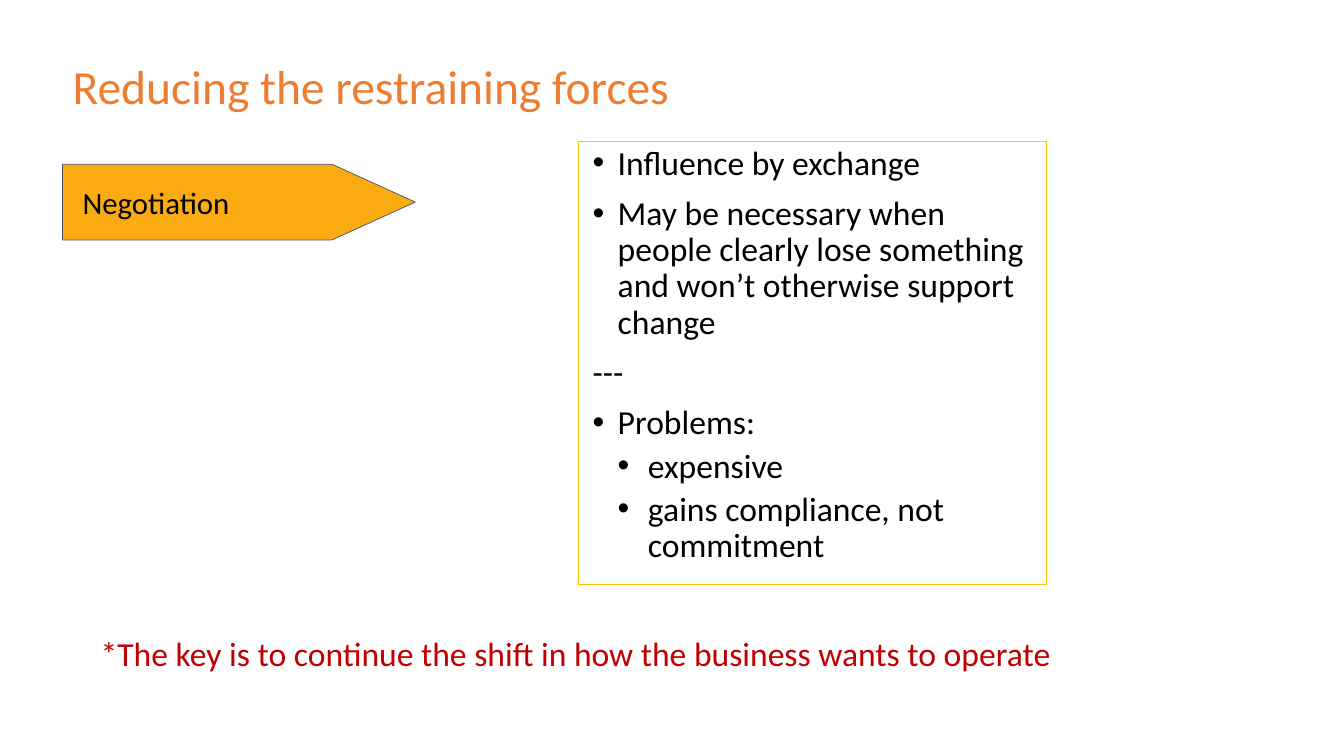
"""Build the slide on negotiation as a way of reducing restraining forces."""
from dataclasses import dataclass

import pptx
import pptx.dml.color
import pptx.enum.shapes
import pptx.enum.text
import pptx.oxml
import pptx.oxml.ns
import pptx.util

SLIDE_WIDTH = pptx.util.Inches(13.333)
SLIDE_HEIGHT = pptx.util.Inches(7.5)
FONT = "Calibri"
BLACK = "000000"
SHAPES = pptx.enum.shapes.MSO_SHAPE
ANCHORS = pptx.enum.text.MSO_ANCHOR


@dataclass(frozen=True)
class Area:
    """A rectangle in percent of the slide's width and height."""
    left: float
    top: float
    width: float
    height: float

    def lengths(self) -> tuple[int, int, int, int]:
        """Return left, top, width and height in EMU."""
        return (round(SLIDE_WIDTH * self.left / 100), round(SLIDE_HEIGHT * self.top / 100),
                round(SLIDE_WIDTH * self.width / 100), round(SLIDE_HEIGHT * self.height / 100))


@dataclass(frozen=True)
class Style:
    """Paragraph settings, with spacing in points and indents in inches."""
    size: float
    colour: str = BLACK
    line_spacing: float = 1.0
    space_before: float = 0
    margin: float = 0
    indent: float = 0
    bullet: str = ""
    level: int = 0


@dataclass(frozen=True)
class Line:
    """One paragraph of text with its style."""
    text: str
    style: Style


@dataclass(frozen=True)
class Panel:
    """An outlined shape holding text."""
    kind: SHAPES
    area: Area
    outline: str
    outline_width: float
    lines: tuple[Line, ...]
    fill: str = ""
    anchor: ANCHORS = ANCHORS.TOP
    left_inset: float = 0.1
    adjustment: float | None = None


TITLE = Style(34, "ED7D31", line_spacing=0.9)
LABEL = Style(22)
KEY = Style(24, "C00000")
POINT = Style(24, line_spacing=0.9, space_before=10, margin=0.29, indent=-0.25, bullet="•")
DIVIDER = Style(24, line_spacing=0.9, space_before=10, margin=0.04)
DETAIL = Style(24, line_spacing=0.9, space_before=5, margin=0.59, indent=-0.3,
               bullet="•", level=1)

LEFT_EDGE = 4.65
TITLE_AREA = Area(LEFT_EDGE, 4.93, 63.38, 13.6)
KEY_AREA = Area(6.75, 83.07, 89.1, 6.67)
PANELS = (
    Panel(SHAPES.RECTANGLE, Area(43.05, 18.67, 34.8, 58.67), "FFC000", 0.75, (
        Line("Influence by exchange", POINT),
        Line("May be necessary when people clearly lose something "
             "and won’t otherwise support change", POINT),
        Line("---", DIVIDER),
        Line("Problems:", POINT),
        Line("expensive", DETAIL),
        Line("gains compliance, not commitment", DETAIL))),
    Panel(SHAPES.PENTAGON, Area(LEFT_EDGE, 21.73, 26.25, 10), "44546A", 0.5,
          (Line("Negotiation", LABEL),), fill="FBAB12", anchor=ANCHORS.MIDDLE,
          left_inset=0.2, adjustment=1.1),
)


def rgb(colour: str) -> pptx.dml.color.RGBColor:
    """Turn a hex string into a colour."""
    return pptx.dml.color.RGBColor.from_string(colour)


def write(shape, lines: tuple[Line, ...], anchor: ANCHORS, left_inset: float = 0.1) -> None:
    """Write styled paragraphs into a shape."""
    frame = shape.text_frame
    frame.word_wrap = True
    frame.auto_size = pptx.enum.text.MSO_AUTO_SIZE.NONE
    frame.vertical_anchor = anchor
    frame.margin_left = pptx.util.Inches(left_inset)
    frame.margin_right = pptx.util.Inches(0.1)
    frame.margin_top = frame.margin_bottom = pptx.util.Inches(0.05)
    for index, line in enumerate(lines):
        style = line.style
        paragraph = frame.add_paragraph() if index else frame.paragraphs[0]
        paragraph.level = style.level
        paragraph.alignment = pptx.enum.text.PP_ALIGN.LEFT
        paragraph.line_spacing = style.line_spacing
        paragraph.space_before = pptx.util.Pt(style.space_before if index else 0)
        properties = paragraph._p.get_or_add_pPr()
        properties.set("marL", str(pptx.util.Inches(style.margin)))
        properties.set("indent", str(pptx.util.Inches(style.indent)))
        if style.bullet:
            namespace = pptx.oxml.ns.nsdecls("a")
            properties.append(pptx.oxml.parse_xml(f'<a:buFont {namespace} typeface="Arial"/>'))
            properties.append(pptx.oxml.parse_xml(
                f'<a:buChar {namespace} char="{style.bullet}"/>'))
        run = paragraph.add_run()
        run.text = line.text
        run.font.name = FONT
        run.font.size = pptx.util.Pt(style.size)
        run.font.color.rgb = rgb(style.colour)


def add_panel(slide, panel: Panel) -> None:
    """Draw an outlined shape with its text."""
    shape = slide.shapes.add_shape(panel.kind, *panel.area.lengths())
    shape.shadow.inherit = False
    if panel.adjustment is not None:
        shape.adjustments[0] = panel.adjustment
    if panel.fill:
        shape.fill.solid()
        shape.fill.fore_color.rgb = rgb(panel.fill)
    else:
        shape.fill.background()
    shape.line.color.rgb = rgb(panel.outline)
    shape.line.width = pptx.util.Pt(panel.outline_width)
    write(shape, panel.lines, panel.anchor, panel.left_inset)


def main() -> None:
    """Build and save the presentation."""
    presentation = pptx.Presentation()
    presentation.slide_width = SLIDE_WIDTH
    presentation.slide_height = SLIDE_HEIGHT
    slide = presentation.slides.add_slide(presentation.slide_layouts.get_by_name("Title Only"))
    title = slide.shapes.title
    title.left, title.top, title.width, title.height = TITLE_AREA.lengths()
    write(title, (Line("Reducing the restraining forces", TITLE),), ANCHORS.MIDDLE)
    for panel in PANELS:
        add_panel(slide, panel)
    key = slide.shapes.add_textbox(*KEY_AREA.lengths())
    write(key, (Line("*The key is to continue the shift in how the business wants to operate",
                     KEY),), ANCHORS.TOP)
    presentation.save("out.pptx")


if __name__ == "__main__":
    main()
